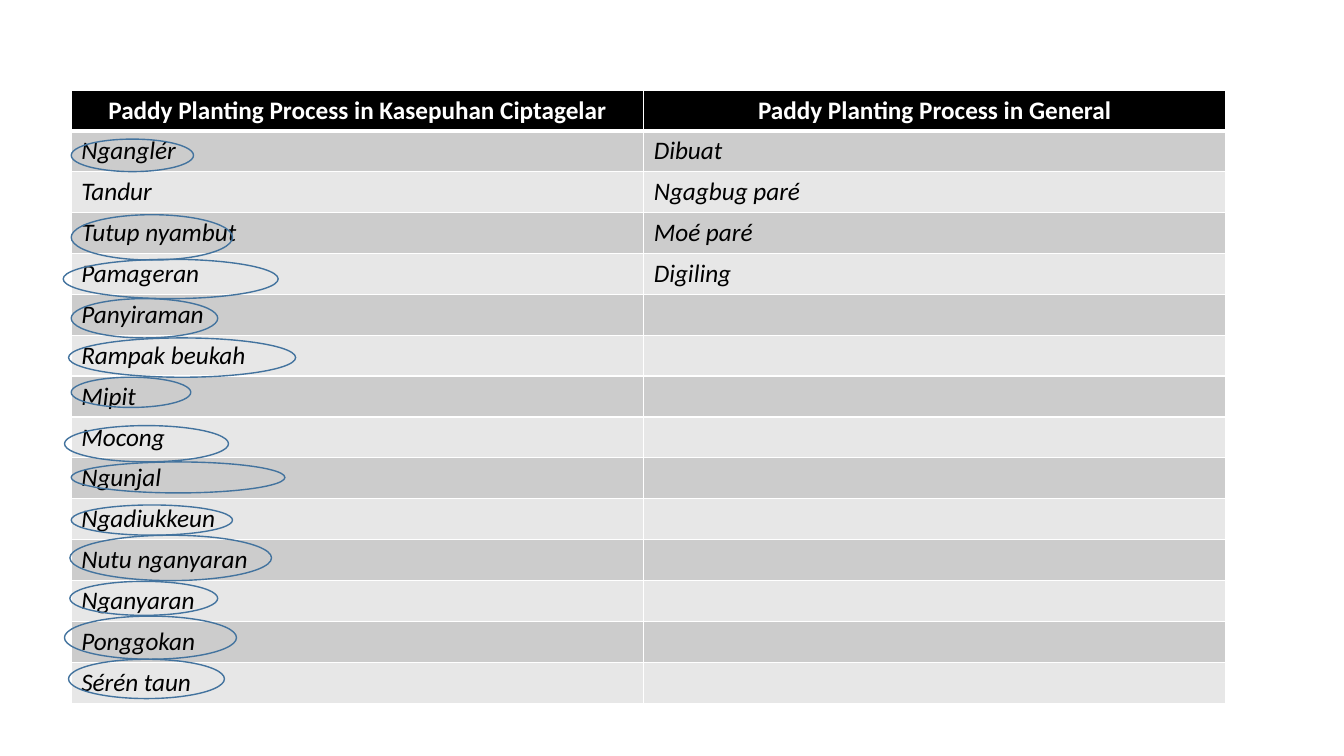
from lxml import etree
from pptx import Presentation
from pptx.dml.color import RGBColor
from pptx.enum.shapes import MSO_SHAPE
from pptx.enum.text import PP_ALIGN
from pptx.oxml.ns import qn
from pptx.util import Inches, Pt

ELLIPSE = MSO_SHAPE.OVAL
CENTER = PP_ALIGN.CENTER
LEFT = PP_ALIGN.LEFT

SLIDE_WIDTH = Inches(13.33)
SLIDE_HEIGHT = Inches(7.5)
FONT = "Calibri"
BLACK, WHITE, BLUE = "000000", "FFFFFF", "43739E"
BANDS = ("CCCCCC", "E7E7E7")

TABLE_LEFT, TABLE_TOP = 5.3, 11.9
COLUMN_WIDTHS = (42.6, 43.3)
ROW_HEIGHT = 5.4

HEADERS = (
    "Paddy Planting Process in Kasepuhan Ciptagelar",
    "Paddy Planting Process in General",
)
CIPTAGELAR_STEPS = (
    ("Nganglér", (5.3, 18.4, 9.1, 4.3)),
    ("Tandur", None),
    ("Tutup nyambut", (5.3, 28.4, 12.0, 6.0)),
    ("Pamageran", (4.7, 34.3, 16.0, 5.2)),
    ("Panyiraman", (5.3, 39.5, 10.9, 5.2)),
    ("Rampak beukah", (5.1, 44.7, 16.9, 5.2)),
    ("Mipit", (5.3, 49.9, 8.9, 4.0)),
    ("Mocong", (4.8, 56.3, 12.2, 4.8)),
    ("Ngunjal", (5.3, 61.1, 15.9, 4.1)),
    ("Ngadiukkeun", (5.3, 66.8, 12.0, 4.0)),
    ("Nutu nganyaran", (5.2, 70.8, 15.0, 6.0)),
    ("Nganyaran", (5.2, 76.9, 11.0, 4.5)),
    ("Ponggokan", (4.8, 81.5, 12.8, 5.7)),
    ("Sérén taun", (5.1, 87.2, 11.6, 5.2)),
)
GENERAL_STEPS = ("Dibuat", "Ngagbug paré", "Moé paré", "Digiling")


def color(value):
    return RGBColor.from_string(value)


def across(percent):
    return round(SLIDE_WIDTH * percent / 100)


def down(percent):
    return round(SLIDE_HEIGHT * percent / 100)


def set_borders(cell, top, bottom):
    properties = cell._tc.get_or_add_tcPr()
    for side, points in (("L", 1), ("R", 1), ("T", top), ("B", bottom)):
        line = etree.SubElement(properties, qn(f"a:ln{side}"), w=str(Pt(points)))
        fill = etree.SubElement(line, qn("a:solidFill"))
        etree.SubElement(fill, qn("a:srgbClr"), val=WHITE)


def fill_cell(cell, text, background, is_header):
    cell.fill.solid()
    cell.fill.fore_color.rgb = color(background)
    paragraph = cell.text_frame.paragraphs[0]
    paragraph.alignment = CENTER if is_header else LEFT
    paragraph.font.size = Pt(18)
    if text:
        run = paragraph.add_run()
        run.text = text
        run.font.name = FONT
        run.font.size = Pt(18)
        run.font.bold = is_header
        run.font.italic = not is_header
        run.font.color.rgb = color(WHITE if is_header else BLACK)


def add_process_table(slide, rows):
    table = slide.shapes.add_table(
        len(rows), len(COLUMN_WIDTHS), across(TABLE_LEFT), down(TABLE_TOP),
        across(sum(COLUMN_WIDTHS)), down(ROW_HEIGHT * len(rows)),
    ).table
    for column, width in zip(table.columns, COLUMN_WIDTHS):
        column.width = across(width)
    for row_index, texts in enumerate(rows):
        table.rows[row_index].height = down(ROW_HEIGHT)
        is_header = row_index == 0
        background = BLACK if is_header else BANDS[(row_index - 1) % 2]
        for column_index, text in enumerate(texts):
            cell = table.cell(row_index, column_index)
            set_borders(cell, 3 if row_index == 1 else 1, 3 if is_header else 1)
            fill_cell(cell, text, background, is_header)


def add_ring(slide, left, top, width, height):
    ring = slide.shapes.add_shape(
        ELLIPSE, across(left), down(top), across(width), down(height)
    )
    ring.shadow.inherit = False
    ring.fill.background()
    ring.line.color.rgb = color(BLUE)
    ring.line.width = Pt(1)


def main():
    presentation = Presentation()
    presentation.slide_width = SLIDE_WIDTH
    presentation.slide_height = SLIDE_HEIGHT
    slide = presentation.slides.add_slide(presentation.slide_layouts[6])

    rows = [HEADERS]
    for index, (step, _) in enumerate(CIPTAGELAR_STEPS):
        general = GENERAL_STEPS[index] if index < len(GENERAL_STEPS) else ""
        rows.append((step, general))
    add_process_table(slide, rows)

    for _, ring in CIPTAGELAR_STEPS:
        if ring:
            add_ring(slide, *ring)

    presentation.save("out.pptx")


if __name__ == "__main__":
    main()
